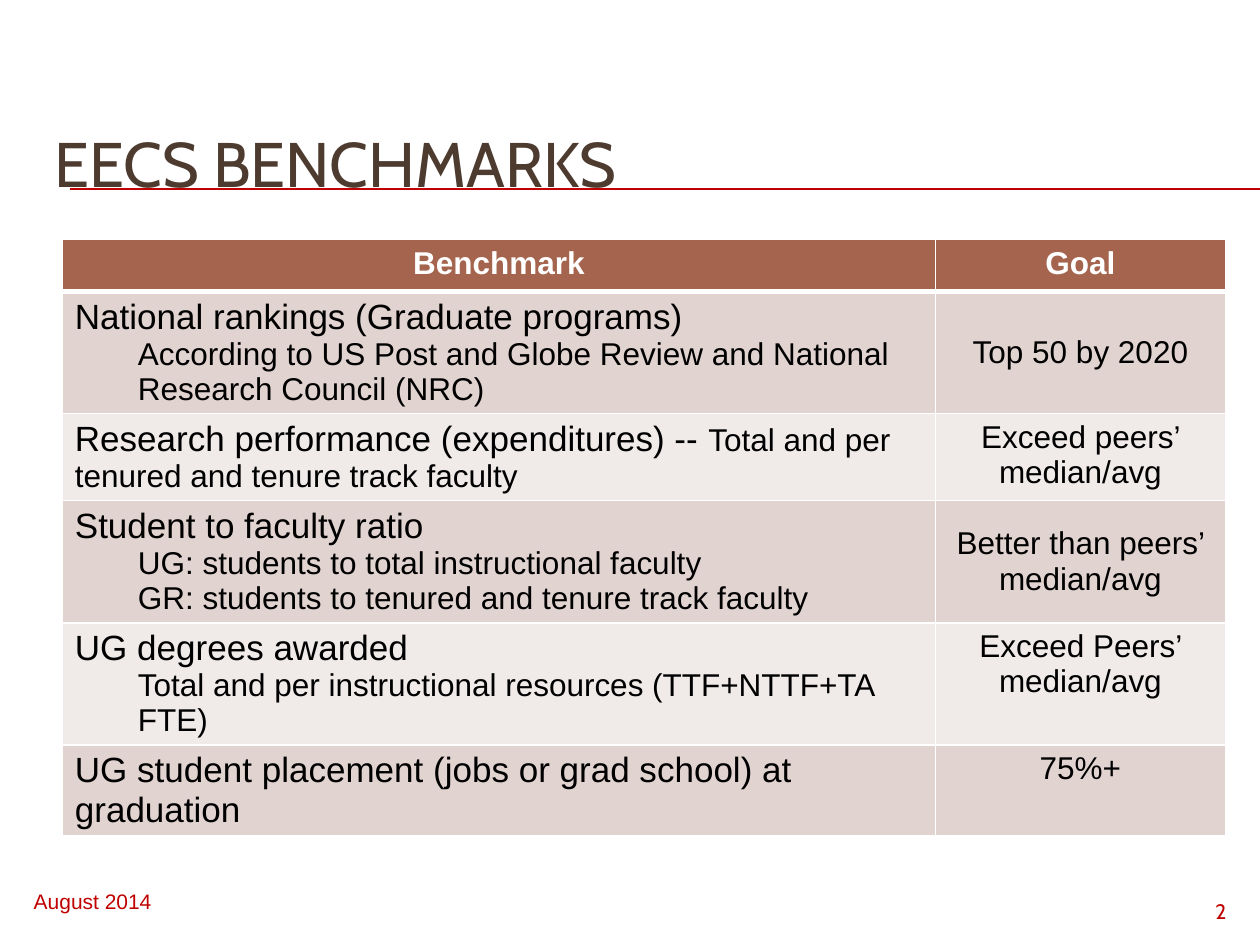
from lxml import etree
from pptx import Presentation
from pptx.dml.color import RGBColor
from pptx.enum.shapes import MSO_CONNECTOR
from pptx.enum.text import MSO_ANCHOR, PP_ALIGN
from pptx.oxml.ns import qn
from pptx.util import Pt

LEFT, CENTER, RIGHT = PP_ALIGN.LEFT, PP_ALIGN.CENTER, PP_ALIGN.RIGHT
TOP, MIDDLE = MSO_ANCHOR.TOP, MSO_ANCHOR.MIDDLE
STRAIGHT = MSO_CONNECTOR.STRAIGHT

RED, BROWN, WHITE, BLACK = "C00000", "4E3B30", "FFFFFF", "000000"
HEADER_FILL, BANDS = "A5644E", ("E1D3D0", "F0EAE9")
INDENT = 36

TITLE = "EECS BENCHMARKS"
HEADERS = ("Benchmark", "Goal")
ROWS = [
    {"heading": "National rankings (Graduate programs)",
     "details": ["According to US Post and Globe Review and National Research Council (NRC)"],
     "goal": "Top 50 by 2020", "anchor": MIDDLE, "height": 69.6},
    {"heading": "Research performance (expenditures) -- ",
     "tail": "Total and per tenured and tenure track faculty",
     "goal": "Exceed peers’ median/avg", "anchor": TOP, "height": 49.7},
    {"heading": "Student to faculty ratio",
     "details": ["UG: students to total instructional faculty",
                 "GR: students to tenured and tenure track faculty"],
     "goal": "Better than peers’ median/avg", "anchor": MIDDLE, "height": 69.6},
    {"heading": "UG degrees awarded",
     "details": ["Total and per instructional resources (TTF+NTTF+TA FTE)"],
     "goal": "Exceed Peers’ median/avg", "anchor": TOP, "height": 69.6},
    {"heading": "UG student placement (jobs or grad school) at graduation",
     "goal": "75%+", "anchor": TOP, "height": 52},
]
COLUMN_WIDTHS = (499, 165.6)
HEADER_HEIGHT = 29.5
FOOTERS = [
    ("August 2014", (12.2, 504, 198, 23), LEFT, "Arial"),
    ("2", (648, 509.8, 59.8, 19.4), RIGHT, "Cabin"),
]


def color(value):
    return RGBColor.from_string(value)


def add_span(para, text, size, ink=BLACK, name="Arial", bold=False):
    span = para.add_run()
    span.text = text
    for key, value in {"size": Pt(size), "name": name, "bold": bold}.items():
        setattr(span.font, key, value)
    span.font.color.rgb = color(ink)


def fill_cell(cell, fill, bottom_width=1):
    properties = cell._tc.get_or_add_tcPr()
    for side in ("lnL", "lnR", "lnT", "lnB"):
        width = bottom_width if side == "lnB" else 1
        line = etree.SubElement(properties, qn(f"a:{side}"), w=str(Pt(width)))
        solid = etree.SubElement(line, qn("a:solidFill"))
        etree.SubElement(solid, qn("a:srgbClr"), val=WHITE)
    cell.fill.solid()
    cell.fill.fore_color.rgb = color(fill)


def add_centered(cell, text, **style):
    para = cell.text_frame.paragraphs[0]
    para.alignment = CENTER
    add_span(para, text, 18, **style)


def add_benchmark(cell, row):
    frame = cell.text_frame
    add_span(frame.paragraphs[0], row["heading"], 20)
    if "tail" in row:
        add_span(frame.paragraphs[0], row["tail"], 18)
    for detail in row.get("details", []):
        para = frame.add_paragraph()
        properties = para._p.get_or_add_pPr()
        properties.set("marL", str(Pt(INDENT)))
        properties.set("indent", "0")
        add_span(para, detail, 18)


def add_benchmark_table(slide):
    heights = [HEADER_HEIGHT] + [row["height"] for row in ROWS]
    table = slide.shapes.add_table(
        len(heights), len(HEADERS), Pt(35.6), Pt(137),
        Pt(sum(COLUMN_WIDTHS)), Pt(sum(heights))).table
    for column, width in zip(table.columns, COLUMN_WIDTHS):
        column.width = Pt(width)
    for line, height in zip(table.rows, heights):
        line.height = Pt(height)
    for index, text in enumerate(HEADERS):
        cell = table.cell(0, index)
        fill_cell(cell, HEADER_FILL, 3)
        add_centered(cell, text, ink=WHITE, bold=True)
    for number, row in enumerate(ROWS, 1):
        benchmark, goal = table.cell(number, 0), table.cell(number, 1)
        for cell in (benchmark, goal):
            fill_cell(cell, BANDS[(number - 1) % 2])
        add_benchmark(benchmark, row)
        add_centered(goal, row["goal"])
        goal.vertical_anchor = row["anchor"]


def add_title(slide):
    rule = slide.shapes.add_connector(STRAIGHT, Pt(40.3), Pt(108), Pt(720), Pt(108))
    rule.line.color.rgb = color(RED)
    rule.line.width = Pt(0.75)
    etree.SubElement(rule._element.spPr, qn("a:effectLst"))
    title = slide.shapes.title
    place = {"left": 23.8, "top": 59.8, "width": 684, "height": 66.2}
    for key, value in place.items():
        setattr(title, key, Pt(value))
    title.text_frame.vertical_anchor = MIDDLE
    para = title.text_frame.paragraphs[0]
    para.alignment = LEFT
    add_span(para, TITLE, 36, BROWN, "Cabin")


def add_footer(slide, text, place, alignment, name):
    box = slide.shapes.add_textbox(*map(Pt, place))
    box.text_frame.word_wrap = True
    para = box.text_frame.paragraphs[0]
    para.alignment = alignment
    add_span(para, text, 12, RED, name)


def main():
    """Build the benchmarks slide and save it."""
    deck = Presentation()
    deck.slide_width, deck.slide_height = Pt(720), Pt(540)
    slide = deck.slides.add_slide(deck.slide_layouts[5])
    slide.background.fill.solid()
    slide.background.fill.fore_color.rgb = color(WHITE)
    add_title(slide)
    add_benchmark_table(slide)
    for footer in FOOTERS:
        add_footer(slide, *footer)
    deck.save("out.pptx")


if __name__ == "__main__":
    main()
